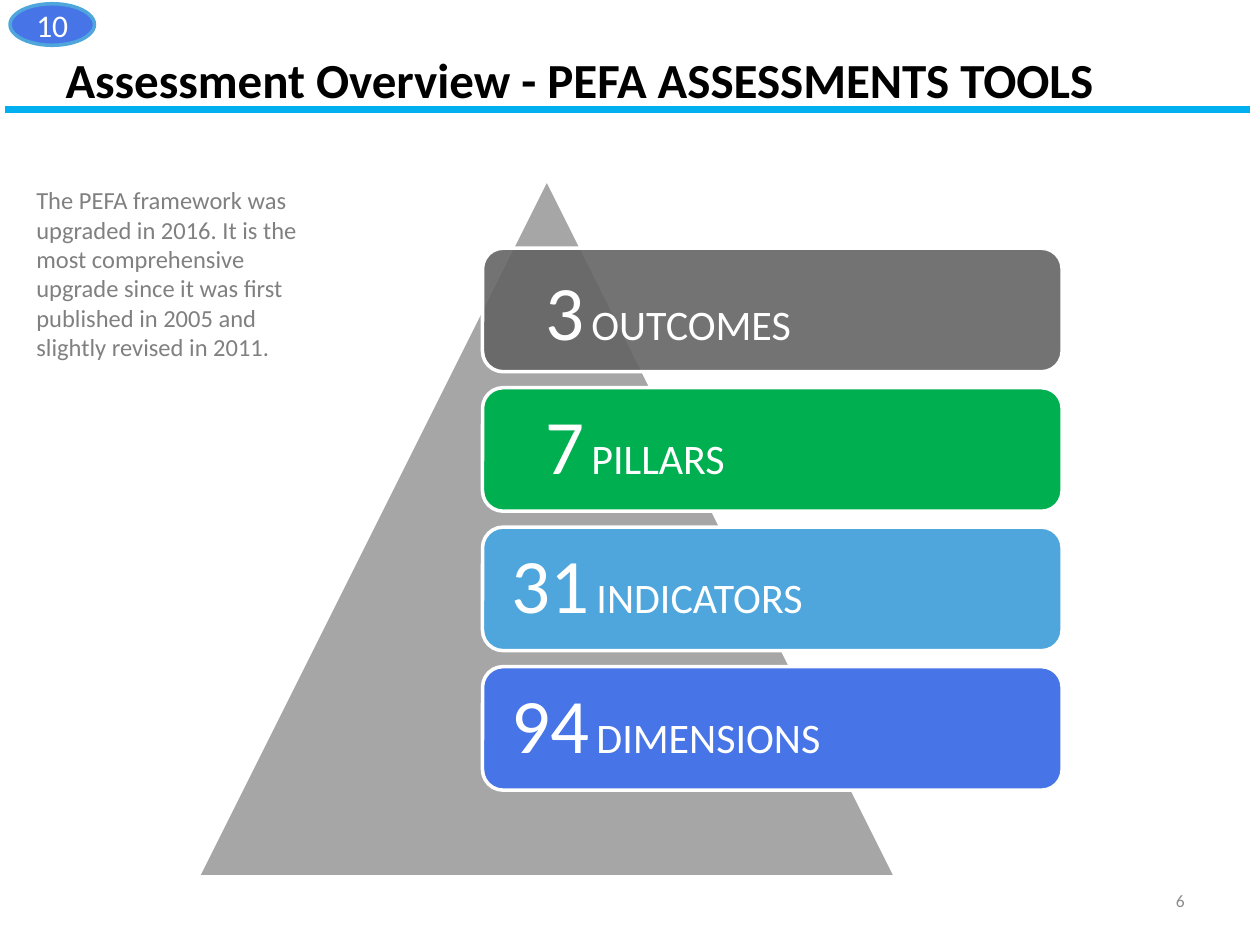
from lxml import etree
from pptx import Presentation
from pptx.dml.color import RGBColor
from pptx.enum.shapes import MSO_CONNECTOR, MSO_SHAPE
from pptx.enum.text import MSO_ANCHOR, PP_ALIGN
from pptx.oxml.ns import qn
from pptx.util import Inches, Pt

LEFT, MID, RIGHT = PP_ALIGN.LEFT, PP_ALIGN.CENTER, PP_ALIGN.RIGHT
TOP, CENTRE = MSO_ANCHOR.TOP, MSO_ANCHOR.MIDDLE
BLACK = RGBColor(0x00, 0x00, 0x00)
WHITE = RGBColor(0xFF, 0xFF, 0xFF)
GREY = RGBColor(0x80, 0x80, 0x80)
PALE = RGBColor(0x8C, 0x8C, 0x8C)
STONE = RGBColor(0xA6, 0xA6, 0xA6)
SLATE = RGBColor(0x64, 0x64, 0x64)
GREEN = RGBColor(0x00, 0xB0, 0x50)
SKY = RGBColor(0x4E, 0xA6, 0xDC)
BLUE = RGBColor(0x47, 0x75, 0xE7)
CYAN = RGBColor(0x00, 0xAF, 0xEF)


def write(shape, parts, color, align=LEFT, anchor=TOP):
    """Fill one paragraph with (text, size) runs."""
    frame = shape.text_frame
    frame.word_wrap = True
    frame.vertical_anchor = anchor
    para = frame.paragraphs[0]
    para.alignment = align
    for text, size in parts:
        run = para.add_run()
        run.text = text
        run.font.name = "Calibri"
        run.font.size = Pt(size)
        run.font.color.rgb = color
    return para


def draw(kind, box, fill, edge):
    shape = slide.shapes.add_shape(kind, *map(Inches, box))
    shape.shadow.inherit = False
    shape.fill.solid()
    shape.fill.fore_color.rgb = fill
    shape.line.color.rgb = edge
    shape.line.width = Pt(2)
    return shape


deck = Presentation()
deck.slide_width, deck.slide_height = Inches(10), Inches(7.5)
slide = deck.slides.add_slide(deck.slide_layouts[5])

# Heading and rule
title = slide.shapes.title
title.left, title.top = Inches(0.42), Inches(0.34)
title.width, title.height = Inches(9.06), Inches(0.57)
write(title, [("Assessment Overview - PEFA ASSESSMENTS TOOLS", 28)], BLACK).runs[0].font.bold = True

rule = slide.shapes.add_connector(
    MSO_CONNECTOR.STRAIGHT, Inches(0.04), Inches(0.87), Inches(9.92), Inches(0.87))
rule.line.color.rgb = CYAN
rule.line.width = Pt(3.6)
etree.SubElement(rule._element.spPr, qn("a:effectLst"))

badge = draw(MSO_SHAPE.OVAL, (0.08, 0.03, 0.67, 0.33), BLUE, SKY)
write(badge, [("10", 18)], WHITE, MID, CENTRE)

# Pyramid with a bar for each level
draw(MSO_SHAPE.ISOSCELES_TRIANGLE, (1.57, 1.42, 5.54, 5.54), STONE, WHITE)

levels = [
    ("3", "OUTCOMES", SLATE),
    ("7", "PILLARS", GREEN),
    ("31", "INDICATORS", SKY),
    ("94", "DIMENSIONS", BLUE),
]
first, step = 1.97, 1.107
for row, (count, name, color) in enumerate(levels):
    bar = draw(MSO_SHAPE.ROUNDED_RECTANGLE, (3.83, first + row * step, 4.6, 0.98), color, WHITE)
    para = write(bar, [(count, 44), (" ", 18), (name, 24)], WHITE, LEFT, CENTRE)
    frame = bar.text_frame
    frame.margin_left = Inches(0.18 if len(count) == 2 else 0.45)
    frame.margin_right = frame.margin_top = frame.margin_bottom = Inches(0.18)
    if row:
        para.line_spacing = 0.9
    else:
        tint = bar._element.spPr.find(qn("a:solidFill"))[0]
        etree.SubElement(tint, qn("a:alpha"), val="90000")

# Side note and page number
note = slide.shapes.add_textbox(Inches(0.19), Inches(1.42), Inches(2.54), Inches(1.51))
write(note, [("The PEFA framework was upgraded in 2016. It is the most comprehensive upgrade "
              "since it was first published in 2005 and slightly revised in 2011.", 14)], GREY)

page = slide.shapes.add_textbox(Inches(9.11), Inches(6.95), Inches(0.39), Inches(0.4))
write(page, [("6", 10)], PALE, RIGHT, CENTRE)

deck.save("out.pptx")
